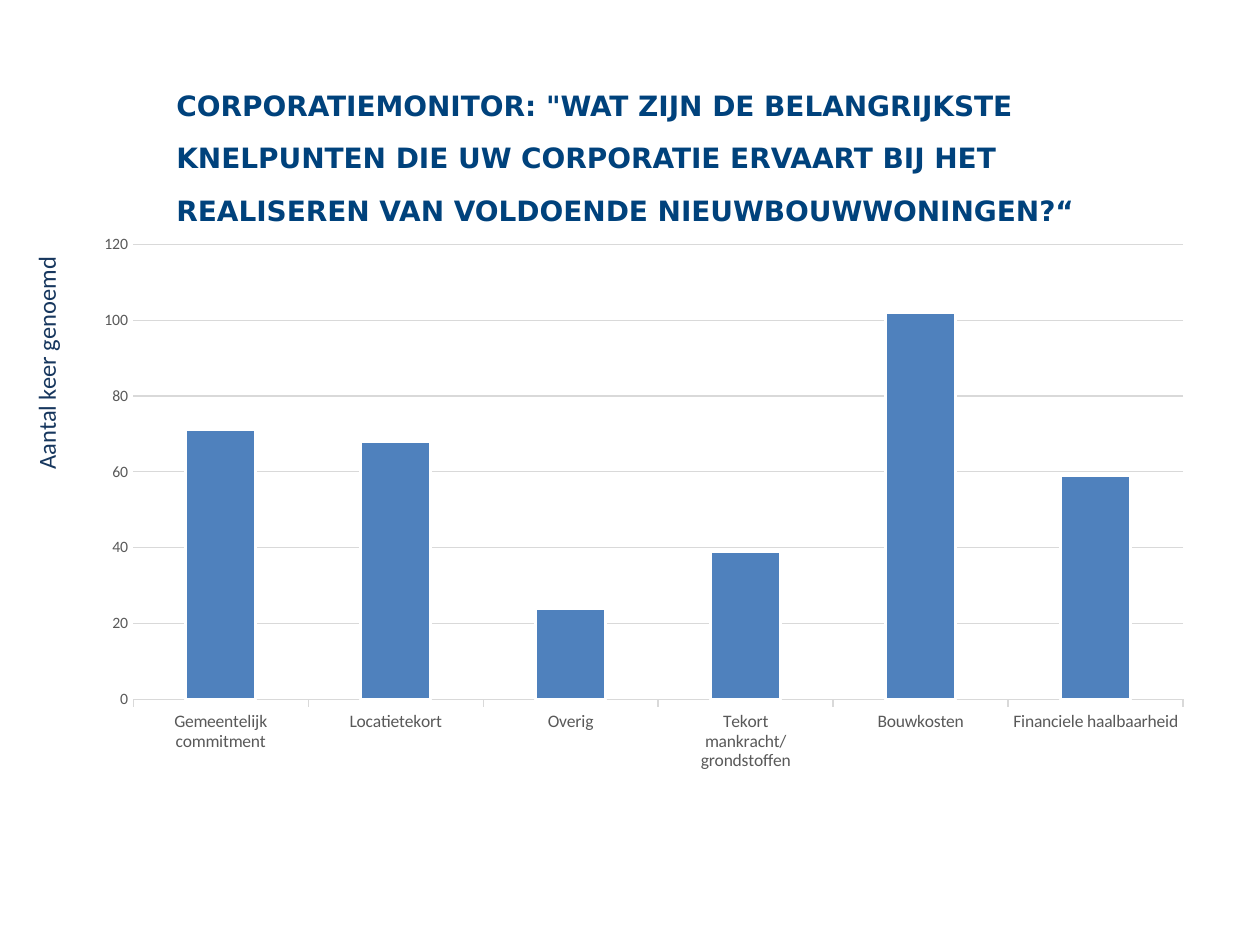
from lxml import etree
from pptx import Presentation
from pptx.chart.data import CategoryChartData
from pptx.dml.color import RGBColor
from pptx.enum.chart import XL_CHART_TYPE, XL_TICK_MARK
from pptx.enum.text import MSO_ANCHOR, PP_ALIGN
from pptx.oxml.ns import qn
from pptx.util import Inches, Pt

# Content
TITLE = ('CORPORATIEMONITOR: "WAT ZIJN DE BELANGRIJKSTE KNELPUNTEN DIE UW '
         'CORPORATIE ERVAART BIJ HET REALISEREN VAN VOLDOENDE NIEUWBOUWWONINGEN?“')
AXIS_LABEL = "Aantal keer genoemd"
SERIES = "Series 1"
MENTIONS = [
    ("Gemeentelijk commitment", 71),
    ("Locatietekort", 68),
    ("Overig", 24),
    ("Tekort mankracht/grondstoffen", 39),
    ("Bouwkosten", 102),
    ("Financiele haalbaarheid", 59),
]

# Places in inches: left, top, width, height
TITLE_BOX = (1.3, 1, 7.8, 0.35)
CHART_BOX = (0.59, 1.78, 8.98, 4.33)
PLOT_BOX = (1.06, 1.94, 8.33, 3.62)
LABEL_BOX = (0.2, 1.94, 0.44, 4.95)

THEME = {
    "title": dict(name="DejaVu Sans", size=Pt(16), bold=True, color="00427C"),
    "label": dict(name="Calibri", size=Pt(14), color="17375E"),
    "chart": dict(name="Calibri", size=Pt(10), color="000000"),
    "categories": dict(name="Calibri", size=Pt(10), color="595959"),
    "values": dict(name="Calibri", size=Pt(9), color="595959"),
    "grid": "D9D9D9",
    "bar": "4F81BD",
    "bar_edge": "FFFFFF",
}


def set_font(font, style):
    for key, value in THEME[style].items():
        if key == "color":
            font.color.rgb = RGBColor.from_string(value)
        else:
            setattr(font, key, value)


def set_line(line, color, width):
    line.color.rgb = RGBColor.from_string(THEME[color])
    line.width = Pt(width)


def inches(box):
    return [Inches(v) for v in box]


def place_plot(chart):
    """Fix the inner plot area as fractions of the chart frame."""
    cl, ct, cw, ch = CHART_BOX
    pl, pt, pw, ph = PLOT_BOX
    area = chart._chartSpace.chart.plotArea
    for old in area.findall(qn("c:layout")):
        area.remove(old)
    layout = etree.Element(qn("c:layout"))
    manual = etree.SubElement(layout, qn("c:manualLayout"))
    settings = dict(layoutTarget="inner", xMode="edge", yMode="edge",
                    x=(pl - cl) / cw, y=(pt - ct) / ch, w=pw / cw, h=ph / ch)
    for tag, value in settings.items():
        text = value if isinstance(value, str) else f"{value:.3f}"
        etree.SubElement(manual, qn(f"c:{tag}")).set("val", text)
    area.insert(0, layout)


prs = Presentation()
prs.slide_width, prs.slide_height = Inches(10), Inches(7.5)
s = prs.slides.add_slide(prs.slide_layouts[5])

# Title
title = s.shapes.title
title.left, title.top, title.width, title.height = inches(TITLE_BOX)
tf = title.text_frame
tf.word_wrap = True
tf.vertical_anchor = MSO_ANCHOR.MIDDLE
p = tf.paragraphs[0]
p.alignment = PP_ALIGN.LEFT
p.line_spacing = Pt(30)
r = p.add_run()
r.text = TITLE
set_font(r.font, "title")

# Column chart
data = CategoryChartData()
data.categories = [name for name, _ in MENTIONS]
data.add_series(SERIES, [count for _, count in MENTIONS])
chart = s.shapes.add_chart(XL_CHART_TYPE.COLUMN_CLUSTERED, *inches(CHART_BOX), data).chart
chart.has_legend = False
chart.has_title = False
set_font(chart.font, "chart")
place_plot(chart)

plot = chart.plots[0]
plot.gap_width = 150
plot.vary_by_categories = False
bars = plot.series[0].format
bars.fill.solid()
bars.fill.fore_color.rgb = RGBColor.from_string(THEME["bar"])
set_line(bars.line, "bar_edge", 1.5)

# Axes
cat, val = chart.category_axis, chart.value_axis
set_font(cat.tick_labels.font, "categories")
set_font(val.tick_labels.font, "values")
cat.major_tick_mark = XL_TICK_MARK.OUTSIDE
val.major_tick_mark = XL_TICK_MARK.NONE
set_line(cat.format.line, "grid", 0.75)
val.format.line.fill.background()
val.minimum_scale, val.maximum_scale, val.major_unit = 0, 120, 20
set_line(val.major_gridlines.format.line, "grid", 0.75)

# Rotated label beside the value axis
tf = s.shapes.add_textbox(*inches(LABEL_BOX)).text_frame
tf.word_wrap = True
tf._txBody.bodyPr.set("vert", "vert270")
p = tf.paragraphs[0]
p.alignment = PP_ALIGN.RIGHT
r = p.add_run()
r.text = AXIS_LABEL
set_font(r.font, "label")

prs.save("out.pptx")
